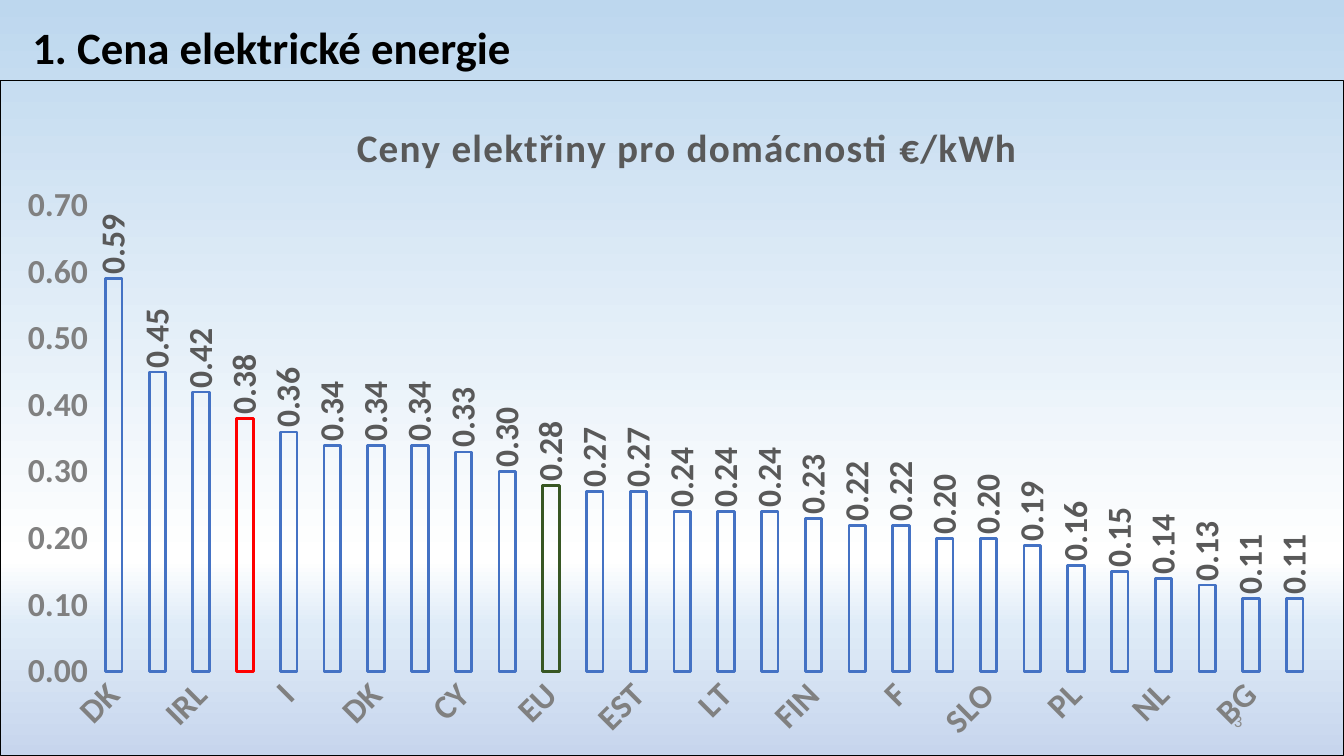
import pptx
import pptx.util
import pptx.chart.data
import pptx.dml.color
import pptx.enum.chart
import pptx.enum.text
import pptx.oxml
import pptx.oxml.ns

Inches = pptx.util.Inches
Pt = pptx.util.Pt
RGB = pptx.dml.color.RGBColor
BLACK = RGB(0x00, 0x00, 0x00)
GRAY = RGB(0x80, 0x80, 0x80)
PALE = RGB(0x8C, 0x8C, 0x8C)
DARK = RGB(0x59, 0x59, 0x59)
BLUE = RGB(0x44, 0x72, 0xC4)
RED = RGB(0xFF, 0x00, 0x00)
GREEN = RGB(0x38, 0x57, 0x23)
SKY = [(0, "BDD7EE"), (74, "FFFFFF"), (83, "DEEBF7"), (100, "C7D5ED")]

PRICES = [
    ("DK", 0.59), ("B", 0.45), ("IRL", 0.42), ("CZ", 0.38), ("I", 0.36),
    ("RO", 0.34), ("DK", 0.34), ("E", 0.34), ("CY", 0.33), ("LV", 0.30),
    ("EU", 0.28), ("S", 0.27), ("EST", 0.27), ("GR", 0.24), ("LT", 0.24),
    ("A", 0.24), ("FIN", 0.23), ("P", 0.22), ("F", 0.22), ("L", 0.20),
    ("SLO", 0.20), ("SK", 0.19), ("PL", 0.16), ("HR", 0.15), ("NL", 0.14),
    ("M", 0.13), ("BG", 0.11), ("H", 0.11),
]
MARKS = {"CZ": RED, "EU": GREEN}


def style(font, size, color, bold=True):
    font.name = "Calibri"
    font.size = Pt(size)
    font.bold = bold
    font.color.rgb = color


def place(parent, **spots):
    """Give a chart part a fixed place, in shares of the chart."""
    for old in parent.findall(pptx.oxml.ns.qn("c:layout")):
        parent.remove(old)
    parts = "".join(f'<c:{tag} val="{val}"/>' for tag, val in spots.items())
    return pptx.oxml.parse_xml(
        f'<c:layout {pptx.oxml.ns.nsdecls("c")}>'
        f"<c:manualLayout>{parts}</c:manualLayout></c:layout>")


deck = pptx.Presentation()
deck.slide_width = Inches(13.33)
deck.slide_height = Inches(7.5)
slide = deck.slides.add_slide(deck.slide_layouts[5])

# Background gradient, top to bottom
back = slide.background.fill
back.gradient()
back.gradient_angle = 270
stops = slide._element.xpath(".//a:gsLst")[0]
for stop in list(stops):
    stops.remove(stop)
for pos, color in SKY:
    stops.append(pptx.oxml.parse_xml(
        f'<a:gs {pptx.oxml.ns.nsdecls("a")} pos="{pos * 1000}">'
        f'<a:srgbClr val="{color}"/></a:gs>'))

# Heading
head = slide.shapes.title
head.left, head.top = Inches(0.22), Inches(0.15)
head.width, head.height = Inches(4.99), Inches(0.64)
frame = head.text_frame
frame.text = "1. Cena elektrické energie"
frame.word_wrap = False
frame.auto_size = pptx.enum.text.MSO_AUTO_SIZE.NONE
frame.vertical_anchor = pptx.enum.text.MSO_ANCHOR.TOP
frame.paragraphs[0].alignment = pptx.enum.text.PP_ALIGN.LEFT
style(frame.paragraphs[0].font, 32, BLACK)

# Slide number
box = slide.shapes.add_textbox(Inches(9.42), Inches(6.95), Inches(3), Inches(0.4))
frame = box.text_frame
frame.text = "3"
frame.word_wrap = True
frame.vertical_anchor = pptx.enum.text.MSO_ANCHOR.MIDDLE
frame.paragraphs[0].alignment = pptx.enum.text.PP_ALIGN.RIGHT
style(frame.paragraphs[0].font, 12, PALE, False)

# Price chart
data = pptx.chart.data.CategoryChartData()
data.categories = [land for land, price in PRICES]
data.add_series("Series 1", [price for land, price in PRICES])
chart = slide.shapes.add_chart(
    pptx.enum.chart.XL_CHART_TYPE.COLUMN_CLUSTERED,
    Inches(0), Inches(0.79), Inches(13.33), Inches(6.71), data).chart
style(chart.font, 24, BLACK)
chart.has_legend = False

# Chart frame
space = chart._chartSpace
space.find(pptx.oxml.ns.qn("c:chart")).addnext(pptx.oxml.parse_xml(
    f'<c:spPr {pptx.oxml.ns.nsdecls("c", "a")}><a:noFill/><a:ln w="9525">'
    f'<a:solidFill><a:srgbClr val="{BLACK}"/></a:solidFill></a:ln></c:spPr>'))

# Chart title
chart.has_title = True
title = chart.chart_title
title.text_frame.text = "Ceny elektřiny pro domácnosti €/kWh"
line = title.text_frame.paragraphs[0]
style(line.font, 28, DARK)
line.runs[0].font._element.set("spc", "100")
title.include_in_layout = False
spot = place(title._element, xMode="edge", yMode="edge", x=0.26, y=0.05)
title._element.find(pptx.oxml.ns.qn("c:tx")).addnext(spot)

# Plot area
area = space.xpath("c:chart/c:plotArea")[0]
area.insert(0, place(area, layoutTarget="inner", xMode="edge", yMode="edge",
                     x=0.068, y=0.186, w=0.912, h=0.69))

# Axes
for axis in (chart.category_axis, chart.value_axis):
    axis.has_major_gridlines = False
    axis.major_tick_mark = pptx.enum.chart.XL_TICK_MARK.NONE
    axis.minor_tick_mark = pptx.enum.chart.XL_TICK_MARK.NONE
    axis.format.line.fill.background()
    style(axis.tick_labels.font, 24, GRAY)
chart.category_axis._element.xpath("c:txPr/a:bodyPr")[0].set("rot", "-2700000")
scale = chart.value_axis
scale.minimum_scale, scale.maximum_scale, scale.major_unit = 0, 0.7, 0.1
scale.tick_labels.number_format = "#,##0.00"
scale.tick_labels.number_format_is_linked = False

# Hollow bars, with two countries marked
plot = chart.plots[0]
plot.gap_width = 164
plot.overlap = -35
plot.vary_by_categories = False
bars = plot.series[0]
looks = [(bars.format, BLUE)]
for spot, (land, price) in enumerate(PRICES):
    if land in MARKS:
        looks.append((bars.points[spot].format, MARKS[land]))
for look, color in looks:
    look.fill.background()
    look.line.color.rgb = color
    look.line.width = Pt(2)

# Upright value labels
tags = bars.data_labels
tags.show_value = True
tags.number_format = "#,##0.00"
tags.number_format_is_linked = False
tags.position = pptx.enum.chart.XL_LABEL_POSITION.OUTSIDE_END
style(tags.font, 24, DARK)
turn = tags._element.xpath("c:txPr/a:bodyPr")[0]
turn.set("rot", "-5400000")
turn.set("vert", "horz")

deck.save("out.pptx")
